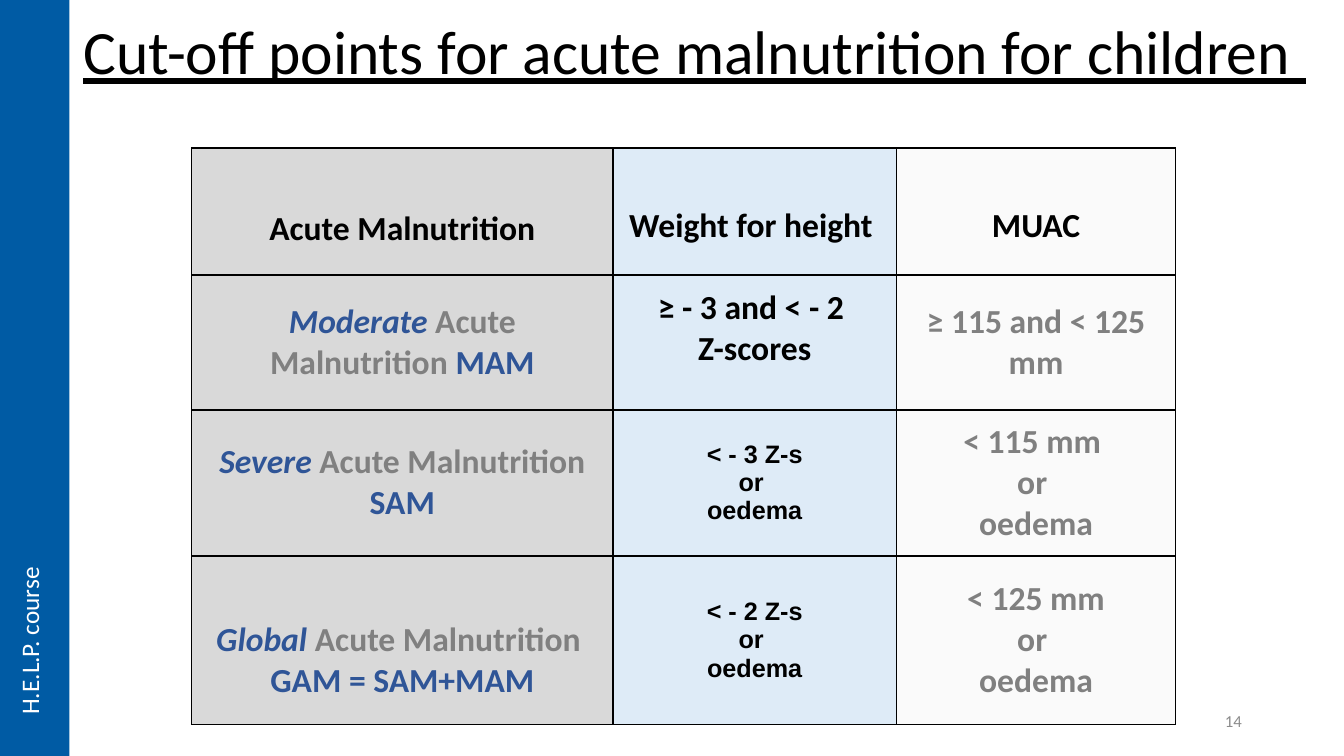
from dataclasses import dataclass

from pptx import Presentation
from pptx.dml.color import RGBColor
from pptx.enum.shapes import MSO_SHAPE
from pptx.enum.text import MSO_ANCHOR, MSO_AUTO_SIZE, PP_ALIGN
from pptx.oxml import parse_xml
from pptx.oxml.ns import nsdecls
from pptx.slide import Slide
from pptx.table import _Cell
from pptx.text.text import TextFrame, _Paragraph
from pptx.util import Cm, Pt


@dataclass(frozen=True)
class Theme:
    font: str = "Calibri"
    alt_font: str = "Arial"
    black: str = "000000"
    white: str = "FFFFFF"
    grey: str = "808080"
    blue: str = "2F5597"
    bar: str = "005BA4"
    number: str = "8C8C8C"
    columns: tuple[str, ...] = ("D9D9D9", "DEEBF7", "FAFAFA")
    title_size: int = 44
    body_size: int = 24
    small_size: int = 18
    number_size: int = 12


THEME = Theme()


@dataclass(frozen=True)
class Run:
    text: str
    color: str = THEME.black
    size: int = THEME.body_size
    font: str = THEME.font
    bold: bool = False
    italic: bool = False
    underline: bool = False


@dataclass(frozen=True)
class CellText:
    lines: tuple[tuple[Run, ...], ...]
    extra_top: float = 0
    extra_bottom: float = 0


@dataclass(frozen=True)
class Box:
    left: float
    top: float
    width: float
    height: float

    def emu(self) -> tuple[Cm, Cm, Cm, Cm]:
        return Cm(self.left), Cm(self.top), Cm(self.width), Cm(self.height)


def strong(text: str, color: str = THEME.black) -> Run:
    return Run(text, color, bold=True)


def level(text: str) -> Run:
    return Run(text, THEME.blue, bold=True, italic=True)


def stacked(*texts: str, color: str = THEME.black, size: int = THEME.body_size,
            font: str = THEME.font) -> CellText:
    return CellText(tuple((Run(t, color, size, font, bold=True),) for t in texts))


def z_score(limit: str) -> CellText:
    return stacked(limit, "or ", "oedema", size=THEME.small_size, font=THEME.alt_font)


def muac(*texts: str) -> CellText:
    return stacked(*texts, color=THEME.grey)


COL_WIDTHS = (10.62, 7.14, 7.04)
ROW_HEIGHTS = (3.2, 3.4, 3.68, 4.24)
TABLE = Box(4.83, 3.73, sum(COL_WIDTHS), sum(ROW_HEIGHTS))
ROWS = (
    (
        CellText(((strong("Acute Malnutrition"),),), extra_top=0.9),
        CellText(((strong("Weight for height "),),), extra_top=0.75),
        CellText(((strong("MUAC"),),), extra_top=0.75),
    ),
    (
        CellText(((level("Moderate "), strong("Acute Malnutrition ", THEME.grey),
                   strong("MAM", THEME.blue)),)),
        CellText(((strong("≥ - 3 and < - 2 "),), (strong("Z-scores"),)), extra_bottom=0.7),
        muac("≥ 115 and < 125 mm"),
    ),
    (
        CellText(((level("Severe"), strong(" Acute Malnutrition ", THEME.grey),
                   strong("SAM", THEME.blue)),)),
        z_score("< - 3 Z-s"),
        muac("< 115 mm ", "or ", "oedema"),
    ),
    (
        CellText(((level("Global "), strong("Acute Malnutrition ", THEME.grey)),
                  (strong("GAM = SAM+MAM", THEME.blue),)), extra_top=1.03),
        z_score("< - 2 Z-s"),
        muac("< 125 mm", "or ", "oedema"),
    ),
)


def add_run(p: _Paragraph, run: Run) -> None:
    r = p.add_run()
    r.text = run.text
    r.font.name = run.font
    r.font.size = Pt(run.size)
    r.font.bold = run.bold
    r.font.italic = run.italic
    r.font.underline = run.underline
    r.font.color.rgb = RGBColor.from_string(run.color)


def fill_frame(tf: TextFrame, lines: tuple[tuple[Run, ...], ...], align: PP_ALIGN) -> None:
    for i, line in enumerate(lines):
        p = tf.add_paragraph() if i else tf.paragraphs[0]
        p.alignment = align
        for run in line:
            add_run(p, run)


def add_borders(cell: _Cell) -> None:
    tc_pr = cell._tc.get_or_add_tcPr()
    for i, side in enumerate(("lnL", "lnR", "lnT", "lnB")):
        tc_pr.insert(i, parse_xml(
            f'<a:{side} {nsdecls("a")} w="{Pt(1)}"><a:solidFill>'
            f'<a:srgbClr val="{THEME.black}"/></a:solidFill></a:{side}>'))


def draw_cell(cell: _Cell, content: CellText, fill: str) -> None:
    cell.fill.solid()
    cell.fill.fore_color.rgb = RGBColor.from_string(fill)
    cell.vertical_anchor = MSO_ANCHOR.MIDDLE
    cell.margin_left = cell.margin_right = Cm(0.15)
    cell.margin_top = Cm(0.1 + content.extra_top)
    cell.margin_bottom = Cm(0.1 + content.extra_bottom)
    fill_frame(cell.text_frame, content.lines, PP_ALIGN.CENTER)
    add_borders(cell)


def draw_title(s: Slide) -> None:
    sp = s.shapes.title
    sp.left, sp.top, sp.width, sp.height = Box(1.75, -0.84, 31.5, 3.18).emu()
    tf = sp.text_frame
    tf.vertical_anchor = MSO_ANCHOR.BOTTOM
    tf.auto_size = MSO_AUTO_SIZE.NONE
    title = Run("Cut-off points for acute malnutrition for children ",
                size=THEME.title_size, underline=True)
    fill_frame(tf, ((title,),), PP_ALIGN.CENTER)
    tf.paragraphs[0].line_spacing = 0.9


def draw_table(s: Slide) -> None:
    table = s.shapes.add_table(len(ROWS), len(COL_WIDTHS), *TABLE.emu()).table
    table.first_row = table.horz_banding = False
    for col, width in zip(table.columns, COL_WIDTHS):
        col.width = Cm(width)
    for row, height, contents in zip(table.rows, ROW_HEIGHTS, ROWS):
        row.height = Cm(height)
        for cell, content, fill in zip(row.cells, contents, THEME.columns):
            draw_cell(cell, content, fill)


def draw_bar(s: Slide) -> None:
    sp = s.shapes.add_shape(MSO_SHAPE.RECTANGLE, *Box(0, 0, 1.75, 19.05).emu())
    sp.shadow.inherit = False
    sp.fill.solid()
    sp.fill.fore_color.rgb = RGBColor.from_string(THEME.bar)
    sp.line.fill.background()


def add_text(s: Slide, box: Box, run: Run, align: PP_ALIGN) -> TextFrame:
    tf = s.shapes.add_textbox(*box.emu()).text_frame
    tf.word_wrap = True
    fill_frame(tf, ((run,),), align)
    return tf


def main() -> None:
    prs = Presentation()
    prs.slide_width, prs.slide_height = Cm(33.87), Cm(19.05)
    s = prs.slides.add_slide(prs.slide_layouts[5])
    draw_title(s)
    draw_table(s)
    draw_bar(s)
    course = add_text(s, Box(0.23, 14.25, 1.27, 4.01),
                      Run("H.E.L.P. course", THEME.white, THEME.small_size), PP_ALIGN.LEFT)
    course.word_wrap = False
    course.auto_size = MSO_AUTO_SIZE.SHAPE_TO_FIT_TEXT
    course._txBody.bodyPr.set("vert", "vert270")
    number = add_text(s, Box(23.93, 17.65, 7.62, 1.02),
                      Run("14", THEME.number, THEME.number_size), PP_ALIGN.RIGHT)
    number.vertical_anchor = MSO_ANCHOR.MIDDLE
    prs.save("out.pptx")


if __name__ == "__main__":
    main()
